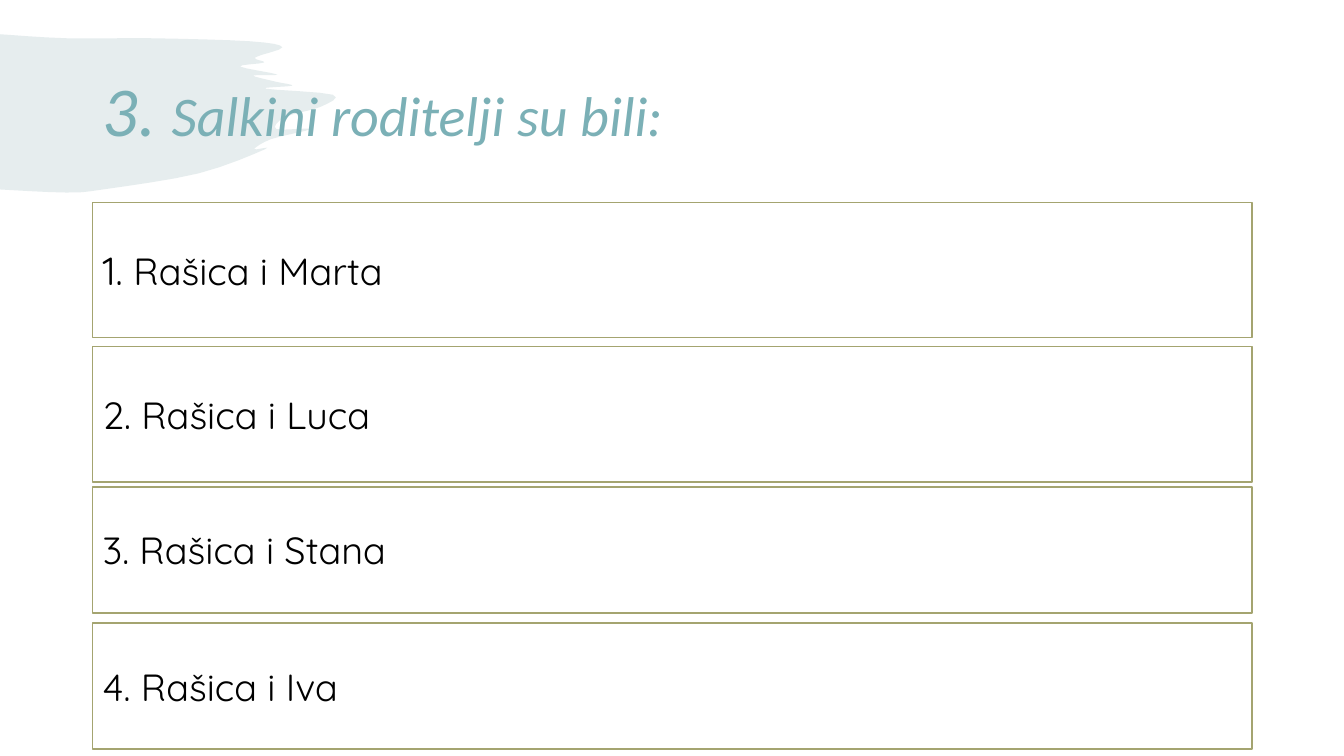
from dataclasses import dataclass

from lxml.etree import SubElement
from pptx import Presentation
from pptx.dml.color import RGBColor
from pptx.enum.shapes import MSO_SHAPE
from pptx.enum.text import MSO_ANCHOR, PP_ALIGN
from pptx.oxml.ns import qn
from pptx.util import Emu, Inches, Pt

WIDTH, HEIGHT = Inches(13.33), Inches(7.5)
LEFT, SPAN = 6.9, 86.25  # shared column, percent of the slide's width
CURVE_STEPS = 4

# Brush stroke in inches, smoothed between these points
BRUSH = [
    (0, 0.34), (0.66, 0.38), (1.51, 0.38), (2.48, 0.41), (2.8, 0.47),
    (2.53, 0.57), (2.62, 0.62), (2.38, 0.66), (2.75, 0.74), (2.51, 0.75),
    (2.73, 0.81), (2.9, 0.85), (2.63, 0.88), (3.3, 0.94), (3.18, 1.06),
    (2.83, 1.16), (2.74, 1.28), (3.08, 1.28), (2.69, 1.38), (2.52, 1.48),
    (2.63, 1.48), (1.97, 1.72), (1.02, 1.88), (0.65, 1.91), (0, 1.88),
]


@dataclass
class Span:
    text: str
    size: int


@dataclass
class Answer:
    top: float  # percent of the slide's height
    height: float
    spans: list[Span]
    space_before: int = 0


ANSWERS = [
    Answer(26.8, 17.87, [Span("1. ", 28), Span("Rašica i Marta", 27)], 10),
    Answer(45.87, 17.87, [Span("2. Rašica i Luca", 27)]),
    Answer(64.4, 16.67, [Span("3. Rašica i Stana", 27)]),
    Answer(82.4, 16.67, [Span("4. Rašica i Iva", 27)]),
]


def colour(value: str) -> RGBColor:
    return RGBColor.from_string(value)


def band(top: float, height: float) -> tuple[Emu, Emu, Emu, Emu]:
    """Place of a full-column band, from percentages of the slide."""
    return (Emu(int(WIDTH * LEFT / 100)), Emu(int(HEIGHT * top / 100)),
            Emu(int(WIDTH * SPAN / 100)), Emu(int(HEIGHT * height / 100)))


def write(shape, spans: list[Span], font: str, ink: str, italic: bool = False):
    frame = shape.text_frame
    frame.word_wrap = True
    frame.vertical_anchor = MSO_ANCHOR.MIDDLE
    para = frame.paragraphs[0]
    para.alignment = PP_ALIGN.LEFT
    for span in spans:
        run = para.add_run()
        run.text = span.text
        run.font.size = Pt(span.size)
        run.font.name = font
        run.font.italic = italic
        run.font.color.rgb = colour(ink)
    return para


def between(a: float, b: float, c: float, d: float, t: float) -> float:
    """Smooth value between b and c, led by their neighbours a and d."""
    return b + t / 2 * (c - a + t * (2 * a - 5 * b + 4 * c - d
                                     + t * (3 * (b - c) + d - a)))


def smooth_outline(knots: list[tuple[float, float]]) -> list[tuple[Emu, Emu]]:
    padded = [knots[0], *knots, knots[-1]]
    outline = []
    for four in zip(padded, padded[1:], padded[2:], padded[3:]):
        xs, ys = zip(*four)
        for step in range(1, CURVE_STEPS + 1):
            t = step / CURVE_STEPS
            outline.append((Inches(between(*xs, t)), Inches(between(*ys, t))))
    return outline


def draw_brush(page) -> None:
    start_x, start_y = BRUSH[0]
    builder = page.shapes.build_freeform(Inches(start_x), Inches(start_y))
    builder.add_line_segments(smooth_outline(BRUSH))
    brush = builder.convert_to_shape()
    brush.shadow.inherit = False
    brush.line.fill.background()
    brush.fill.solid()
    brush.fill.fore_color.rgb = colour("82A8AB")
    tint = next(brush.element.spPr.iter(qn("a:srgbClr")))
    SubElement(tint, qn("a:alpha")).set("val", "20000")


def draw_title(page) -> None:
    box = page.shapes.add_textbox(*band(5.33, 19.33))
    spans = [Span("3. ", 50), Span("Salkini roditelji su bili:", 40)]
    write(box, spans, "Calibri", "7BB0B6", italic=True).line_spacing = 0.9


def draw_answer(page, answer: Answer) -> None:
    button = page.shapes.add_shape(MSO_SHAPE.ACTION_BUTTON_CUSTOM,
                                   *band(answer.top, answer.height))
    button.shadow.inherit = False
    button.fill.solid()
    button.fill.fore_color.rgb = colour("FFFFFF")
    button.line.color.rgb = colour("A4A470")
    button.line.width = Pt(1)
    para = write(button, answer.spans, "Quicksand", "000000")
    para.space_before = Pt(answer.space_before)


def main() -> None:
    deck = Presentation()
    deck.slide_width, deck.slide_height = WIDTH, HEIGHT
    page = deck.slides.add_slide(deck.slide_layouts[6])
    draw_brush(page)
    draw_title(page)
    for answer in ANSWERS:
        draw_answer(page, answer)
    deck.save("out.pptx")


if __name__ == "__main__":
    main()
